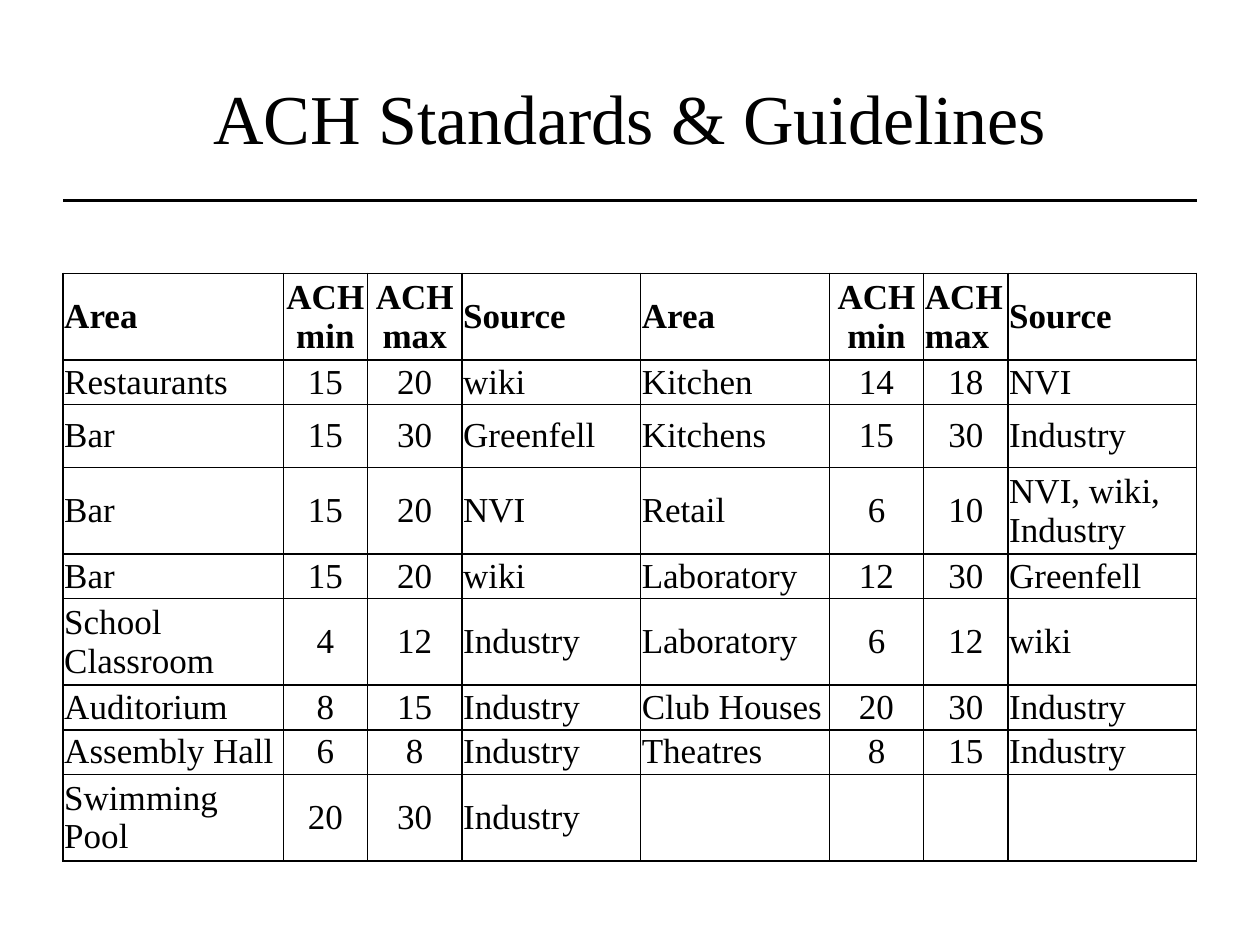
from dataclasses import dataclass

from lxml.etree import SubElement
from pptx import Presentation
from pptx.dml.color import RGBColor
from pptx.enum.shapes import MSO_CONNECTOR
from pptx.enum.text import MSO_ANCHOR, PP_ALIGN
from pptx.oxml.ns import qn
from pptx.util import Inches, Pt


@dataclass(frozen=True)
class Theme:
    """Colours, font and sizes of the slide."""
    ink: str = "000000"
    font: str = "Times New Roman"
    title: int = 40
    body: int = 20
    rule: float = 2
    border: float = 1


THEME = Theme()
COLUMNS = [1.75, 0.67, 0.75, 1.42, 1.5, 0.75, 0.67, 1.5]
ROWS = [0.68, 0.35, 0.5, 0.68, 0.35, 0.68, 0.35, 0.35, 0.35]
NUMERIC = {1, 2, 5, 6}
STANDARDS = [
    ["Area", "ACH\nmin", "ACH\nmax", "Source"] * 2,
    ["Restaurants", "15", "20", "wiki", "Kitchen", "14", "18", "NVI"],
    ["Bar", "15", "30", "Greenfell", "Kitchens", "15", "30", "Industry"],
    ["Bar", "15", "20", "NVI", "Retail", "6", "10", "NVI, wiki, Industry"],
    ["Bar", "15", "20", "wiki", "Laboratory", "12", "30", "Greenfell"],
    ["School Classroom", "4", "12", "Industry", "Laboratory", "6", "12", "wiki"],
    ["Auditorium", "8", "15", "Industry", "Club Houses", "20", "30", "Industry"],
    ["Assembly Hall", "6", "8", "Industry", "Theatres", "8", "15", "Industry"],
    ["Swimming Pool", "20", "30", "Industry", "", "", "", ""],
]


def write(p, text, size, align, bold=False):
    """Fill a paragraph, one run for each line of the text."""
    p.alignment = align
    for i, line in enumerate(text.split("\n")):
        if i:
            p.add_line_break()
        r = p.add_run()
        r.text = line
        r.font.name, r.font.size, r.font.bold = THEME.font, Pt(size), bold
        r.font.color.rgb = RGBColor.from_string(THEME.ink)


def set_borders(cell):
    """Draw a solid line on all four sides of a cell."""
    props = cell._tc.get_or_add_tcPr()
    for i, side in enumerate(("a:lnL", "a:lnR", "a:lnT", "a:lnB")):
        ln = props.makeelement(qn(side), {"w": str(Pt(THEME.border))})
        fill = SubElement(ln, qn("a:solidFill"))
        SubElement(fill, qn("a:srgbClr"), val=THEME.ink)
        props.insert(i, ln)


def add_title(s, text, x, y, w, h):
    """Place the centred title with a rule just below its box."""
    tf = s.shapes.add_textbox(Inches(x), Inches(y), Inches(w), Inches(h)).text_frame
    tf.word_wrap = True
    tf.vertical_anchor = MSO_ANCHOR.MIDDLE
    write(tf.paragraphs[0], text, THEME.title, PP_ALIGN.CENTER)
    rule_y = Inches(y + h + 0.04)
    rule = s.shapes.add_connector(
        MSO_CONNECTOR.STRAIGHT, Inches(x), rule_y, Inches(x + w), rule_y)
    rule.line.color.rgb = RGBColor.from_string(THEME.ink)
    rule.line.width = Pt(THEME.rule)
    SubElement(rule._element.spPr, qn("a:effectLst"))


def add_standards(s, x, y, w, h):
    """Place the table of air change rates, scaling its columns to the width."""
    table = s.shapes.add_table(
        len(ROWS), len(COLUMNS), Inches(x), Inches(y), Inches(w), Inches(h)).table
    table.first_row = table.horz_banding = False
    for column, width in zip(table.columns, COLUMNS):
        column.width = Inches(width * w / sum(COLUMNS))
    for row, height in zip(table.rows, ROWS):
        row.height = Inches(height)
    for i, values in enumerate(STANDARDS):
        for j, text in enumerate(values):
            cell = table.cell(i, j)
            cell.fill.background()
            set_borders(cell)
            cell.vertical_anchor = MSO_ANCHOR.MIDDLE
            cell.margin_left = cell.margin_right = Inches(0.01)
            cell.margin_top = cell.margin_bottom = Inches(0.01)
            centred = j in NUMERIC and (i, j) != (0, 6)
            if text:
                write(cell.text_frame.paragraphs[0], text, THEME.body,
                      PP_ALIGN.CENTER if centred else PP_ALIGN.LEFT, bold=i == 0)


def main():
    """Build the slide and save it."""
    prs = Presentation()
    prs.slide_width, prs.slide_height = Inches(10), Inches(7.5)
    s = prs.slides.add_slide(prs.slide_layouts[6])
    add_title(s, "ACH Standards & Guidelines", 0.5, 0.3, 9, 1.25)
    add_standards(s, 0.5, 2.17, 9, sum(ROWS))
    prs.save("out.pptx")


if __name__ == "__main__":
    main()
